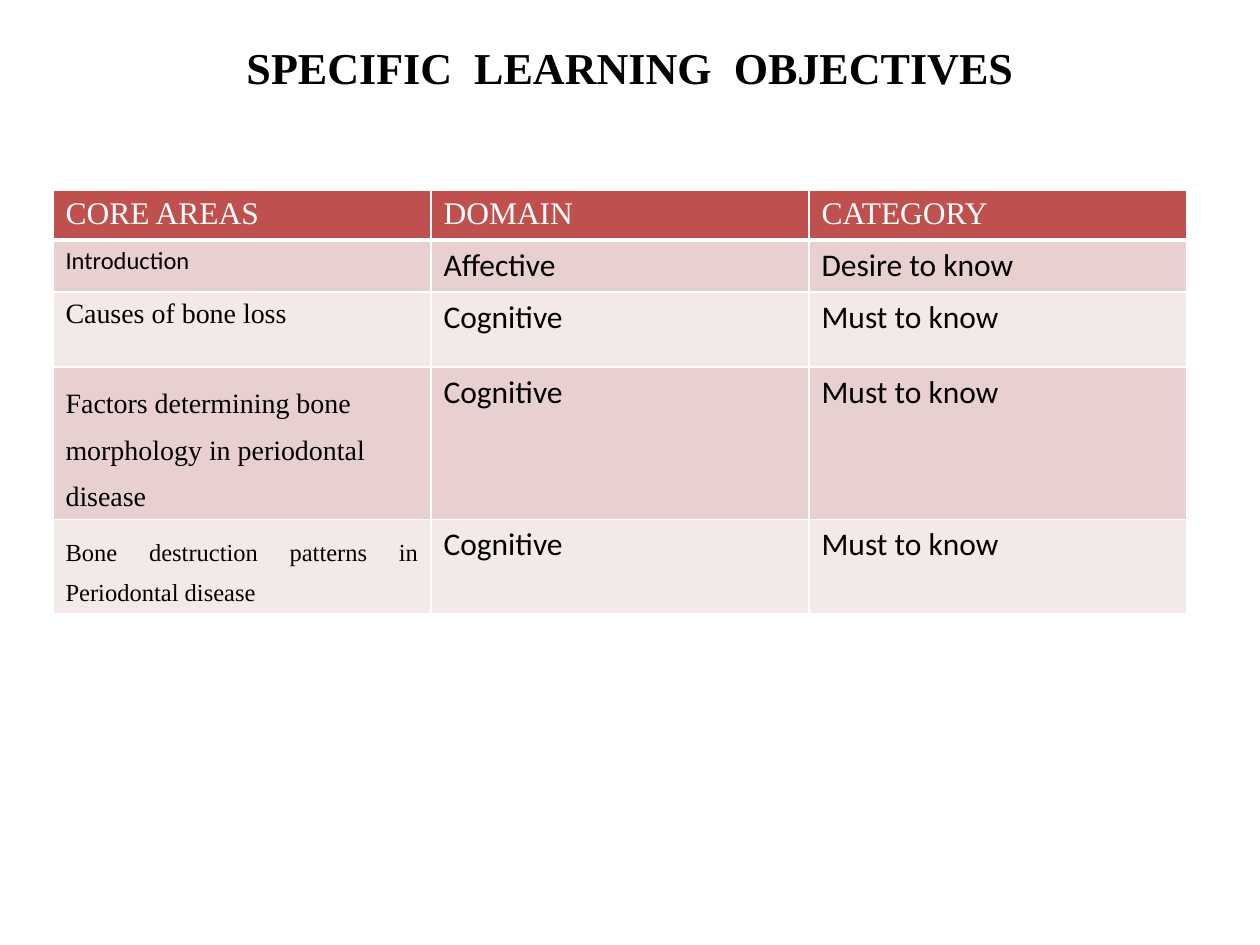
from lxml.etree import SubElement
from pptx import Presentation
from pptx.dml.color import RGBColor
from pptx.enum.text import MSO_ANCHOR, PP_ALIGN
from pptx.oxml.ns import qn
from pptx.util import Pt

TITLE = "SPECIFIC  LEARNING  OBJECTIVES"
HEADERS = ("CORE AREAS", "DOMAIN", "CATEGORY")
OBJECTIVES = [
    ("Introduction", "Affective", "Desire to know"),
    ("Causes of bone loss", "Cognitive", "Must to know"),
    ("Factors determining bone morphology in periodontal disease", "Cognitive", "Must to know"),
    ("Bone destruction patterns in Periodontal disease", "Cognitive", "Must to know"),
]

BLACK = RGBColor(0x00, 0x00, 0x00)
WHITE = RGBColor(0xFF, 0xFF, 0xFF)
HEADER_RED = RGBColor(0xC0, 0x50, 0x4D)
BANDS = (RGBColor(0xE8, 0xD0, 0xD0), RGBColor(0xF4, 0xE9, 0xE9))

SERIF, SANS = "Times New Roman", "Calibri"
TITLE_FONT = {"name": SERIF, "size": Pt(25.2), "bold": True}
HEADER_FONT = {"name": SERIF, "size": Pt(18), "bold": False}
BODY_FONT = {"name": SANS, "size": Pt(18), "bold": False}
AREA_FONTS = [
    {"name": SANS, "size": Pt(14)},
    {"name": SERIF, "size": Pt(16)},
    {"name": SERIF, "size": Pt(16)},
    {"name": SERIF, "size": Pt(14)},
]
AREA_LAYOUTS = [
    {},
    {},
    {"line_spacing": 1.5},
    {"line_spacing": 1.5, "alignment": PP_ALIGN.JUSTIFY},
]

EMU_PER_PX = 914400 / 126
SLIDE_SIZE = (1260, 945)
TITLE_BOX = (63, 38, 1134, 57)
TABLE_LEFT, TABLE_TOP, COLUMN_WIDTH = 53, 190, 378
ROW_HEIGHTS = (50, 52, 75, 152, 94)


def px(length):
    return round(length * EMU_PER_PX)


def apply(target, values):
    for name, value in values.items():
        setattr(target, name, value)


def write(paragraph, text, font, color, layout):
    apply(paragraph, layout)
    run = paragraph.add_run()
    run.text = text
    apply(run.font, font)
    run.font.color.rgb = color


def draw_borders(cell, bottom):
    properties = cell._tc.get_or_add_tcPr()
    for side, width in {"lnL": 1, "lnR": 1, "lnT": 1, "lnB": bottom}.items():
        line = SubElement(properties, qn(f"a:{side}"), w=str(Pt(width)))
        fill = SubElement(line, qn("a:solidFill"))
        SubElement(fill, qn("a:srgbClr"), val=str(WHITE))


def fill_cell(cell, text, font, color, background, layout, bottom=1):
    draw_borders(cell, bottom)
    cell.fill.solid()
    cell.fill.fore_color.rgb = background
    write(cell.text_frame.paragraphs[0], text, font, color, layout)


def main():
    deck = Presentation()
    deck.slide_width, deck.slide_height = map(px, SLIDE_SIZE)
    slide = deck.slides.add_slide(deck.slide_layouts[5])

    title = slide.shapes.title
    apply(title, dict(zip(("left", "top", "width", "height"), map(px, TITLE_BOX))))
    title.text_frame.vertical_anchor = MSO_ANCHOR.MIDDLE
    write(title.text_frame.paragraphs[0], TITLE, TITLE_FONT, BLACK, {"alignment": PP_ALIGN.CENTER})

    objectives = slide.shapes.add_table(
        len(ROW_HEIGHTS), len(HEADERS), px(TABLE_LEFT), px(TABLE_TOP),
        px(COLUMN_WIDTH * len(HEADERS)), px(sum(ROW_HEIGHTS)),
    ).table
    for column in objectives.columns:
        column.width = px(COLUMN_WIDTH)
    for row, height in zip(objectives.rows, ROW_HEIGHTS):
        row.height = px(height)

    for column, header in enumerate(HEADERS):
        fill_cell(objectives.cell(0, column), header, HEADER_FONT, WHITE, HEADER_RED, {}, bottom=3)
    for index, entries in enumerate(OBJECTIVES):
        for column, entry in enumerate(entries):
            is_area = column == 0
            font = BODY_FONT | AREA_FONTS[index] if is_area else BODY_FONT
            layout = AREA_LAYOUTS[index] if is_area else {}
            fill_cell(objectives.cell(index + 1, column), entry, font, BLACK,
                      BANDS[index % len(BANDS)], layout)

    deck.save("out.pptx")


if __name__ == "__main__":
    main()
